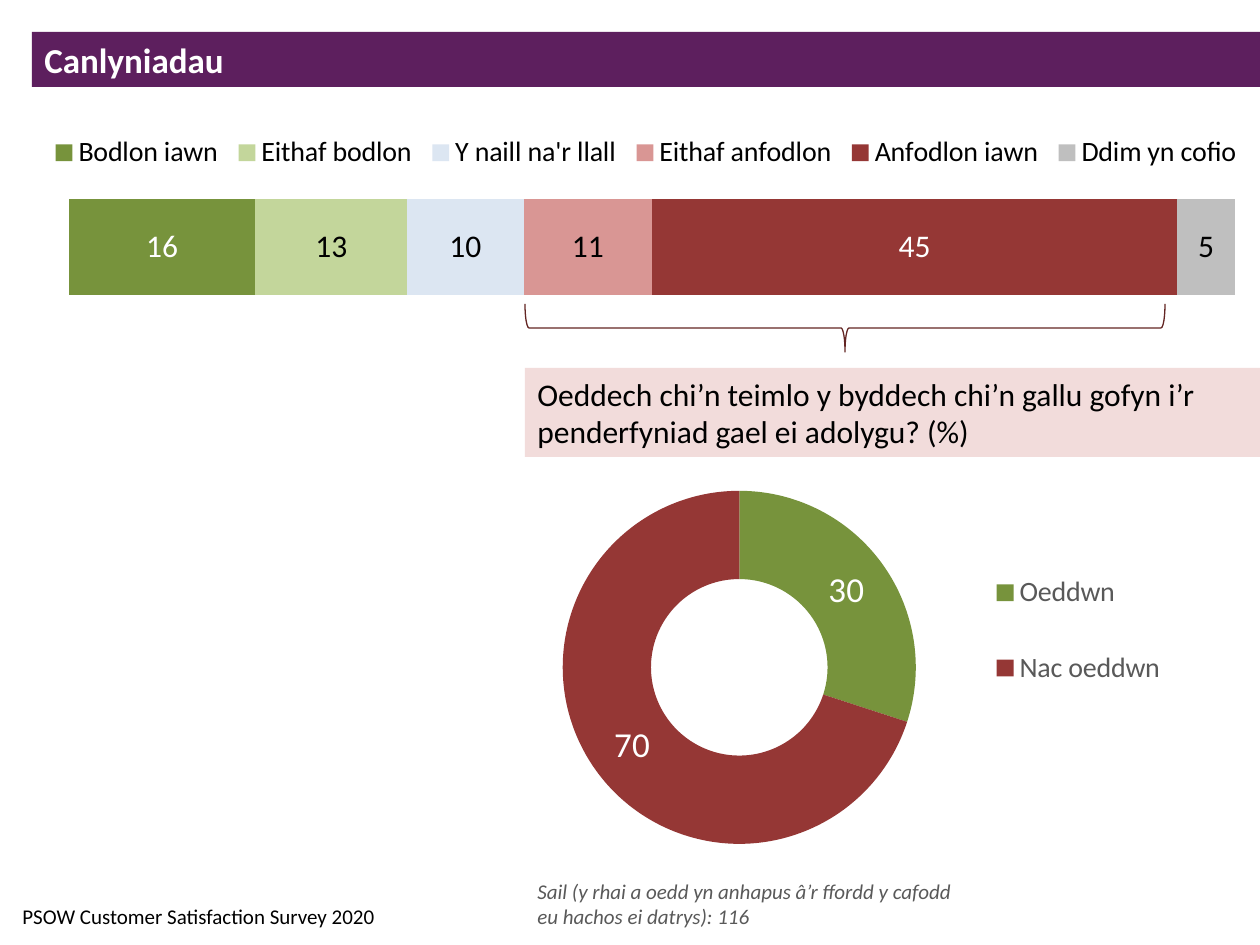
from lxml import etree
from pptx import Presentation
from pptx.chart.data import CategoryChartData
from pptx.dml.color import RGBColor
from pptx.enum.chart import XL_CHART_TYPE, XL_LEGEND_POSITION
from pptx.enum.shapes import MSO_SHAPE
from pptx.enum.text import MSO_ANCHOR, PP_ALIGN
from pptx.oxml.ns import qn
from pptx.util import Pt

RECT, BRACE = MSO_SHAPE.RECTANGLE, MSO_SHAPE.RIGHT_BRACE
BAR, RING = XL_CHART_TYPE.BAR_STACKED_100, XL_CHART_TYPE.DOUGHNUT
RIGHT, TOP = XL_LEGEND_POSITION.RIGHT, XL_LEGEND_POSITION.TOP
LEFT, MIDDLE, HIGH = PP_ALIGN.LEFT, MSO_ANCHOR.MIDDLE, MSO_ANCHOR.TOP
SCALE = 914400 / 126
FONT = "Calibri"
HUES = {
    "white": "FFFFFF", "black": "000000", "grey": "595959",
    "purple": "5D1F5E", "blush": "F2DCDB", "wine": "632523",
    "green": "77933C", "lime": "C3D69B", "ice": "DCE6F2",
    "rose": "D99694", "red": "953735", "silver": "BFBFBF",
}
RATES = [
    ("Bodlon iawn", 16, "green", "white"),
    ("Eithaf bodlon", 13, "lime", "black"),
    ("Y naill na'r llall", 10, "ice", "black"),
    ("Eithaf anfodlon", 11, "rose", "black"),
    ("Anfodlon iawn", 45, "red", "white"),
    ("Ddim yn cofio", 5, "silver", "black"),
]
REPLIES = [("Oeddwn", 30, "green"), ("Nac oeddwn", 70, "red")]


def emu(*sizes):
    return [round(size * SCALE) for size in sizes]


def paint(fill, hue):
    fill.solid()
    fill.fore_color.rgb = RGBColor.from_string(HUES[hue])


def style(font, size, hue="black", bold=False, italic=False):
    font.name, font.size = FONT, Pt(size)
    font.bold, font.italic = bold, italic
    font.color.rgb = RGBColor.from_string(HUES[hue])


def write(shape, text, anchor=HIGH, **form):
    frame = shape.text_frame
    frame.word_wrap = True
    frame.vertical_anchor = anchor
    para = frame.paragraphs[0]
    para.alignment = LEFT
    run = para.add_run()
    run.text = text
    style(run.font, **form)


def arrange(part, spot, box, inner=False):
    for old in part.findall(qn("c:layout")):
        part.remove(old)
    layout = etree.Element(qn("c:layout"))
    manual = etree.SubElement(layout, qn("c:manualLayout"))
    rules = [("layoutTarget", "inner")] if inner else []
    rules += [("xMode", "edge"), ("yMode", "edge"), *zip("xywh", box)]
    for tag, value in rules:
        etree.SubElement(manual, qn("c:" + tag)).set("val", str(value))
    part.insert(spot, layout)


class Deck:
    """Holds the style and the current slide."""

    def __init__(self, wide, high):
        self.show = Presentation()
        self.show.slide_width, self.show.slide_height = emu(wide, high)
        self.slide = self.show.slides.add_slide(self.show.slide_layouts[6])

    def note(self, box, text, **form):
        write(self.slide.shapes.add_textbox(*emu(*box)), text, **form)

    def band(self, box, back, text, **form):
        shape = self.slide.shapes.add_shape(RECT, *emu(*box))
        shape.shadow.inherit = False
        paint(shape.fill, back)
        shape.line.fill.background()
        write(shape, text, MIDDLE, **form)

    def brace(self, box, hue):
        shape = self.slide.shapes.add_shape(BRACE, *emu(*box))
        shape.shadow.inherit = False
        shape.rotation = 90
        shape.fill.background()
        paint(shape.line.fill, hue)
        shape.line.width = Pt(0.75)

    def chart(self, kind, box, data, side, plot, key, hue):
        frame = self.slide.shapes.add_chart(kind, *emu(*box), data)
        chart = frame.chart
        chart.has_title = False
        style(chart.font, 18)
        chart.has_legend = True
        legend = chart.legend
        legend.position = side
        legend.include_in_layout = False
        style(legend.font, 16, hue)
        arrange(chart.plots[0]._element.getparent(), 0, plot, True)
        arrange(legend._element, 1, key)
        return chart

    def label(self, series, size, hue):
        labels = series.data_labels
        labels.show_value = True
        style(labels.font, size, hue)

    def bar(self, box, rows, **form):
        data = CategoryChartData()
        data.categories = ["1"]
        for name, value, *_ in rows:
            data.add_series(name, [value])
        chart = self.chart(BAR, box, data, RIGHT, **form)
        chart.category_axis.reverse_order = True
        chart.value_axis.has_major_gridlines = False
        chart.category_axis.visible = chart.value_axis.visible = False
        plot = chart.plots[0]
        plot.vary_by_categories = False
        plot.gap_width, plot.overlap = 75, 100
        for series, (_, _, hue, ink) in zip(plot.series, rows):
            paint(series.format.fill, hue)
            self.label(series, 18, ink)

    def ring(self, box, rows, **form):
        data = CategoryChartData()
        data.categories = [row[0] for row in rows]
        data.add_series("Series 1", [row[1] for row in rows])
        chart = self.chart(RING, box, data, TOP, **form)
        plot = chart.plots[0]
        plot.vary_by_categories = True
        series = plot.series[0]
        for spot, (_, _, hue) in enumerate(rows):
            paint(series.points[spot].format.fill, hue)
        self.label(series, 20, "white")


def main():
    deck = Deck(1260, 945)
    deck.note((10, 897, 662, 38), "PSOW Customer Satisfaction Survey 2020", size=12)
    deck.band((32, 32, 1228, 55), "purple", "Canlyniadau",
              size=20, hue="white", bold=True)
    deck.band((525, 368, 735, 89), "blush",
              "Oeddech chi’n teimlo y byddech chi’n gallu gofyn i’r "
              "penderfyniad gael ei adolygu? (%)", size=18)
    deck.note((525, 872, 462, 63),
              "Sail (y rhai a oedd yn anhapus â’r ffordd y cafodd "
              "eu hachos ei datrys): 116", size=12, hue="grey", italic=True)
    deck.bar((32, 88, 1228, 418), RATES, plot=(0.03, 0.18, 0.95, 0.4),
             key=(0.01, 0.1, 0.98, 0.11), hue="black")
    deck.brace((821, 8, 48, 640), "wine")
    deck.ring((452, 456, 798, 436), REPLIES, plot=(0.09, 0.08, 0.54, 0.81),
              key=(0.66, 0.18, 0.25, 0.44), hue="grey")
    deck.show.save("out.pptx")


if __name__ == "__main__":
    main()
